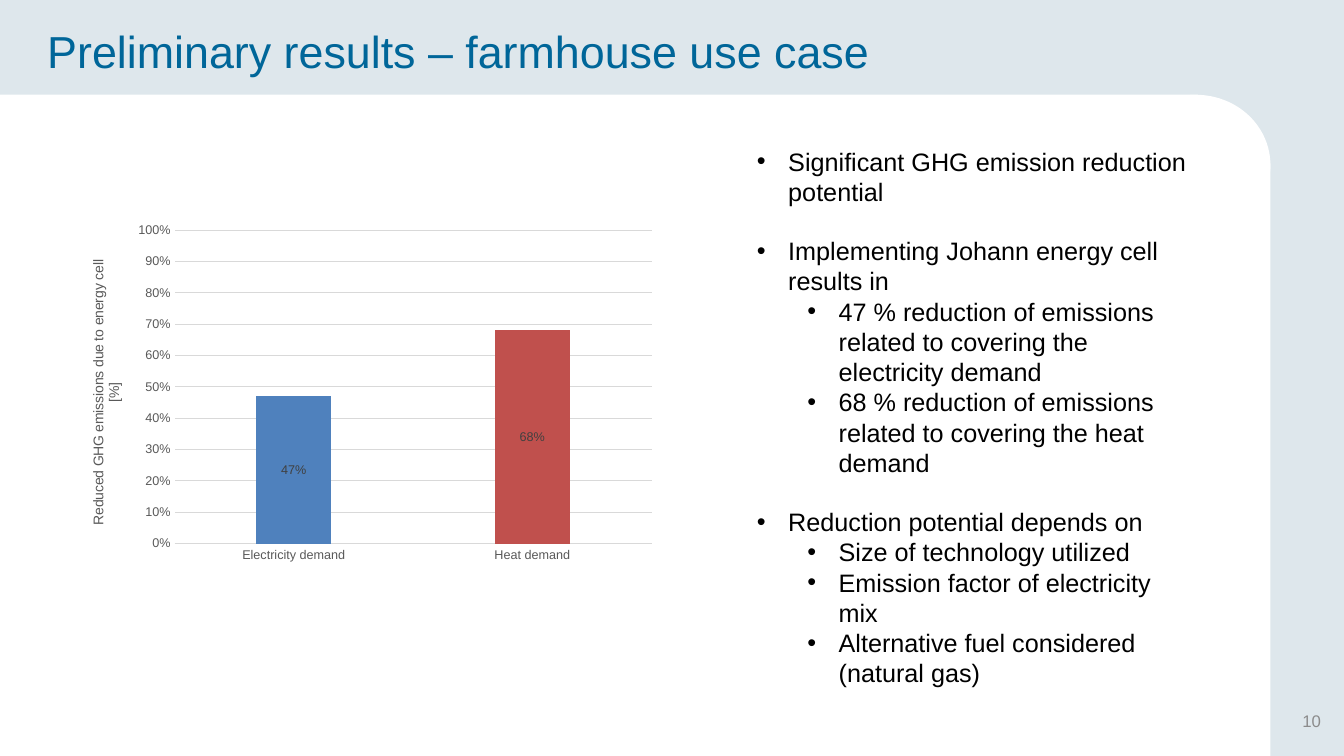
from lxml import etree
from pptx import Presentation
from pptx.chart.data import CategoryChartData
from pptx.dml.color import RGBColor
from pptx.enum import chart as c, shapes, text
from pptx.oxml.ns import qn
from pptx.util import Inches, Pt

FONT = "Arial"
GREY, GRID = "595959", "D9D9D9"
BULLETS = [
    (0, "Significant GHG emission reduction potential"),
    (0, "Implementing Johann energy cell results in"),
    (1, "47 % reduction of emissions related to covering the electricity demand"),
    (1, "68 % reduction of emissions related to covering the heat demand"),
    (0, "Reduction potential depends on"),
    (1, "Size of technology utilized"),
    (1, "Emission factor of electricity mix"),
    (1, "Alternative fuel considered (natural gas)"),
]


def color(value):
    return RGBColor.from_string(value)


def style_font(font, size, value):
    font.name, font.size, font.bold = FONT, Pt(size), False
    font.color.rgb = color(value)


def paint(fill, value):
    fill.solid()
    fill.fore_color.rgb = color(value)


def add_panel_part(slide, kind, *box):
    shape = slide.shapes.add_shape(kind, *map(Inches, box))
    shape.shadow.inherit = False
    paint(shape.fill, "FFFFFF")
    shape.line.fill.background()


def add_text_frame(slide, box, anchor):
    frame = slide.shapes.add_textbox(*map(Inches, box)).text_frame
    frame.word_wrap = True
    frame.vertical_anchor = anchor
    return frame


def add_run(paragraph, words, size, value):
    run = paragraph.add_run()
    run.text = words
    style_font(run.font, size, value)


def add_line(slide, box, words, size, value, align):
    frame = add_text_frame(slide, box, text.MSO_ANCHOR.MIDDLE)
    paragraph = frame.paragraphs[0]
    paragraph.alignment = align
    add_run(paragraph, words, size, value)


def add_bullets(slide, box, items):
    frame = add_text_frame(slide, box, text.MSO_ANCHOR.TOP)
    for index, (level, words) in enumerate(items):
        paragraph = frame.add_paragraph() if index else frame.paragraphs[0]
        paragraph.level = level
        # One empty line's height separates the main points
        paragraph.space_before = Pt(20.7 if index and level == 0 else 0)
        properties = paragraph._p.get_or_add_pPr()
        properties.set("marL", str(Inches(0.31 + 0.5 * level)))
        properties.set("indent", str(Inches(-0.31)))
        etree.SubElement(properties, qn("a:buFont"), typeface=FONT)
        etree.SubElement(properties, qn("a:buChar"), char="•")
        add_run(paragraph, words, 18, "000000")


def style_axis(axis):
    axis.major_tick_mark = axis.minor_tick_mark = c.XL_TICK_MARK.NONE
    style_font(axis.tick_labels.font, 9, GREY)


def style_line(line):
    line.color.rgb = color(GRID)
    line.width = Pt(0.75)


def add_reduction_chart(slide, *box):
    data = CategoryChartData(number_format="0%")
    data.categories = ["Electricity demand", "Heat demand"]
    data.add_series("Series 1", (0.47, 0.68))
    chart = slide.shapes.add_chart(
        c.XL_CHART_TYPE.COLUMN_CLUSTERED, *map(Inches, box), data).chart
    chart.has_legend = chart.has_title = False
    style_font(chart.font, 10, "000000")

    # Axes
    style_axis(chart.category_axis)
    style_line(chart.category_axis.format.line)
    values = chart.value_axis
    style_axis(values)
    values.minimum_scale, values.maximum_scale, values.major_unit = 0, 1, 0.1
    values.tick_labels.number_format = "0%"
    values.tick_labels.number_format_is_linked = False
    values.format.line.fill.background()
    style_line(values.major_gridlines.format.line)
    add_run(values.axis_title.text_frame.paragraphs[0],
            "Reduced GHG emissions due to energy cell [%]", 10, GREY)

    # Columns and their labels
    plot = chart.plots[0]
    plot.gap_width, plot.overlap = 219, -27
    plot.vary_by_categories = False
    series = plot.series[0]
    paint(series.format.fill, "4F81BD")
    paint(series.points[1].format.fill, "C0504D")
    labels = series.data_labels
    labels.show_value = True
    labels.position = c.XL_LABEL_POSITION.CENTER
    labels.number_format, labels.number_format_is_linked = "0%", False
    style_font(labels.font, 9, "404040")


def main():
    presentation = Presentation()
    presentation.slide_width = Inches(13.33)
    presentation.slide_height = Inches(7.5)
    slide = presentation.slides.add_slide(presentation.slide_layouts[6])
    paint(slide.background.fill, "DEE7EC")

    # White panel with a rounded top right corner
    kinds = shapes.MSO_SHAPE
    add_panel_part(slide, kinds.RECTANGLE, 0, 0.94, 11.88, 6.56)
    add_panel_part(slide, kinds.OVAL, 11.12, 0.94, 1.48, 1.39)
    add_panel_part(slide, kinds.RECTANGLE, 7.14, 1.62, 5.46, 5.88)

    # Title and slide number
    add_line(slide, (0.37, 0, 11.39, 1), "Preliminary results – farmhouse use case",
             32, "006699", text.PP_ALIGN.LEFT)
    add_line(slide, (10.09, 6.95, 3.11, 0.4), "10", 12, "8C8C8C", text.PP_ALIGN.RIGHT)

    # Findings and chart
    add_bullets(slide, (7.41, 1.4, 4.46, 6.16), BULLETS)
    add_reduction_chart(slide, 0.68, 2.14, 5.9, 3.51)
    presentation.save("out.pptx")


if __name__ == "__main__":
    main()
